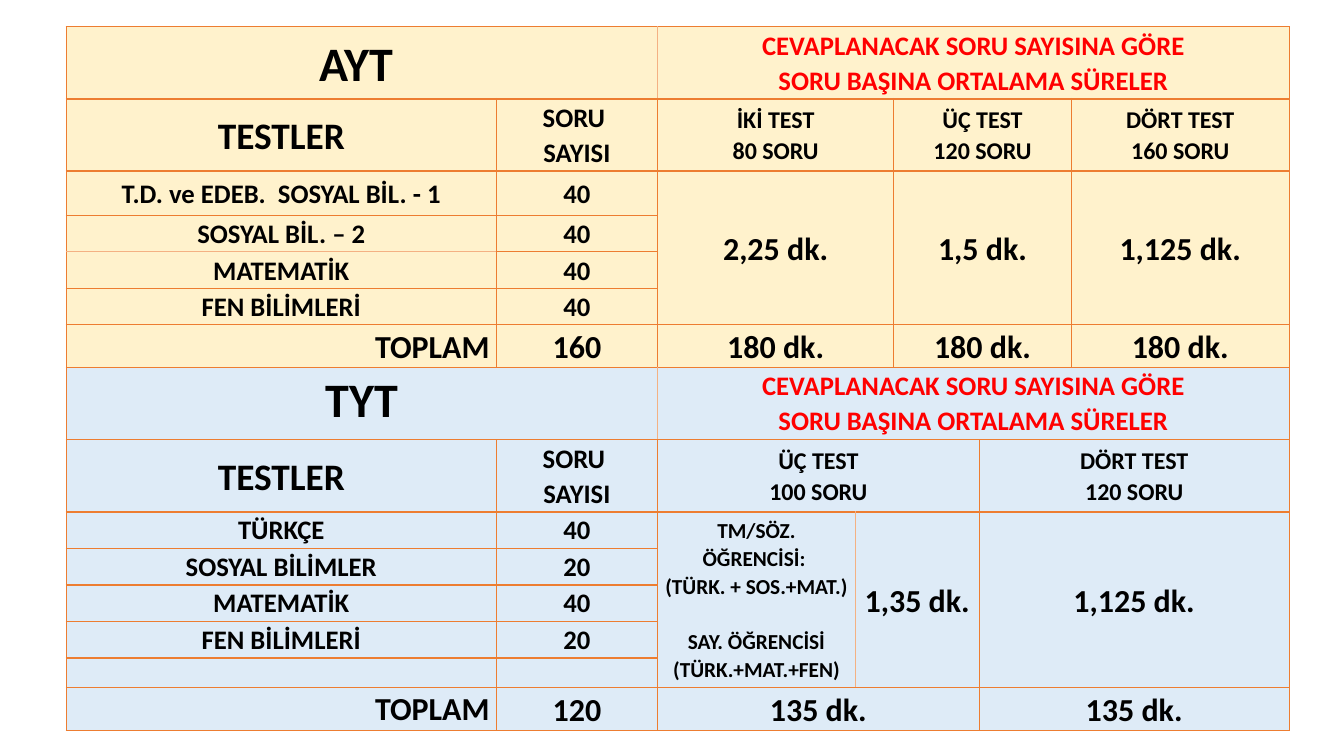
from dataclasses import dataclass, field

from lxml import etree
from pptx import Presentation
from pptx.dml.color import RGBColor
from pptx.enum import text
from pptx.oxml import ns
from pptx.table import Table, _Cell
from pptx.util import Inches, Pt

ORANGE = RGBColor(0xED, 0x7D, 0x31)
PALE_ORANGE = RGBColor(0xF4, 0xB1, 0x83)
CREAM = RGBColor(0xFF, 0xF2, 0xCC)
PALE_BLUE = RGBColor(0xDE, 0xEB, 0xF7)
RED = RGBColor(0xFF, 0x00, 0x00)
BLACK = RGBColor(0x00, 0x00, 0x00)

FONT = "Calibri"
CENTER, RIGHT = text.PP_ALIGN.CENTER, text.PP_ALIGN.RIGHT
TOP, MIDDLE = text.MSO_ANCHOR.TOP, text.MSO_ANCHOR.MIDDLE

COLUMN_WIDTHS = [4.48, 1.68, 2.06, 0.4, 0.89, 0.96, 2.27]
AYT_HEIGHTS = [0.75, 0.75, 0.46, 0.38, 0.38, 0.38, 0.45]
TYT_HEIGHTS = [0.75, 0.75, 0.38, 0.38, 0.38, 0.38, 0.31, 0.45]
ROW_HEIGHTS = AYT_HEIGHTS + TYT_HEIGHTS
TYT_ROW = len(AYT_HEIGHTS)


@dataclass(frozen=True)
class Border:
    color: RGBColor = ORANGE
    width: float = 1


SOFT = Border(PALE_ORANGE)
THICK = Border(width=2)


@dataclass
class Entry:
    """One table entry; edges holds the borders that differ, by side L, R, T, B."""
    row: int
    col: int
    lines: list[str]
    size: float
    rows: int = 1
    cols: int = 1
    color: RGBColor = BLACK
    align: text.PP_ALIGN = CENTER
    anchor: text.MSO_ANCHOR = MIDDLE
    edges: dict[str, Border] = field(default_factory=dict)
    gap_before: dict[int, float] = field(default_factory=dict)


def exam_head(top: int, exam: str, anchor: text.MSO_ANCHOR,
              bottom: Border) -> list[Entry]:
    """Exam name, red heading and the two column heads both exams share."""
    return [
        Entry(top, 0, [exam], 36, cols=2, anchor=anchor,
              edges={"R": SOFT, "B": bottom}),
        Entry(top, 2, ["CEVAPLANACAK SORU SAYISINA GÖRE",
                       "SORU BAŞINA ORTALAMA SÜRELER"], 20, cols=5,
              color=RED, anchor=anchor, edges={"L": SOFT, "B": bottom}),
        Entry(top + 1, 0, ["TESTLER"], 28, edges={"T": bottom}),
        Entry(top + 1, 1, ["SORU ", "SAYISI"], 20, edges={"T": bottom}),
    ]


def test_rows(top: int, tests: list[tuple[str, str]],
              anchor: text.MSO_ANCHOR) -> list[Entry]:
    return [Entry(top + i, col, [label], 20, anchor=anchor)
            for i, test in enumerate(tests) for col, label in enumerate(test)]


def total_row(row: int, questions: str, anchor: text.MSO_ANCHOR) -> list[Entry]:
    return [Entry(row, 0, ["TOPLAM"], 24, align=RIGHT, anchor=anchor),
            Entry(row, 1, [questions], 24)]


def ayt_entries() -> list[Entry]:
    tests = test_rows(2, [("T.D. ve EDEB.  SOSYAL BİL. - 1", "40"),
                          ("SOSYAL BİL. – 2", "40"),
                          ("MATEMATİK", "40"),
                          ("FEN BİLİMLERİ", "40")], MIDDLE)
    for test in tests:
        if test.col == 0 and test.row in (3, 4):
            test.edges["B" if test.row == 3 else "T"] = SOFT
    entries = exam_head(0, "AYT ", MIDDLE, THICK) + tests + total_row(6, "160", MIDDLE)
    for col, cols, count, questions, pace in [
            (2, 2, "İKİ TEST", "80 SORU", "2,25 dk."),
            (4, 2, "ÜÇ TEST", "120 SORU", "1,5 dk."),
            (6, 1, "DÖRT TEST", "160 SORU", "1,125 dk.")]:
        entries += [
            Entry(1, col, [count, questions], 18, cols=cols, edges={"T": THICK}),
            Entry(2, col, [pace], 24, rows=4, cols=cols),
            Entry(6, col, ["180 dk."], 24, cols=cols),
        ]
    return entries


def tyt_entries() -> list[Entry]:
    first_test, total = TYT_ROW + 2, len(ROW_HEIGHTS) - 1
    entries = exam_head(TYT_ROW, "TYT", TOP, Border())
    entries += test_rows(first_test, [("TÜRKÇE", "40"), ("SOSYAL BİLİMLER", "20"),
                                      ("MATEMATİK", "40"), ("FEN BİLİMLERİ", "20")], TOP)
    entries += total_row(total, "120", TOP)
    for col, cols, count, questions in [(2, 3, "ÜÇ TEST", "100 SORU"),
                                        (5, 2, "DÖRT TEST", "120 SORU")]:
        entries += [Entry(TYT_ROW + 1, col, [count, questions], 18, cols=cols),
                    Entry(total, col, ["135 dk."], 24, cols=cols)]
    return entries + [
        Entry(first_test, 2, ["TM/SÖZ. ÖĞRENCİSİ: ", "(TÜRK. + SOS.+MAT.)",
                              "SAY. ÖĞRENCİSİ", "(TÜRK.+MAT.+FEN)"], 16,
              rows=5, edges={"R": SOFT}, gap_before={2: 21}),
        Entry(first_test, 3, ["1,35 dk."], 24, rows=5, cols=2, edges={"L": SOFT}),
        Entry(first_test, 5, ["1,125 dk."], 24, rows=5, cols=2),
    ]


def style_cell(cell: _Cell, fill: RGBColor, edges: dict[str, Border]) -> None:
    cell.margin_left = cell.margin_right = Inches(0.07)
    cell.margin_top = cell.margin_bottom = 0
    properties = cell._tc.get_or_add_tcPr()
    for side in "LRTB":
        border = edges.get(side, Border())
        line = etree.SubElement(properties, ns.qn(f"a:ln{side}"), w=str(Pt(border.width)))
        solid = etree.SubElement(line, ns.qn("a:solidFill"))
        etree.SubElement(solid, ns.qn("a:srgbClr"), val=str(border.color))
    cell.fill.solid()
    cell.fill.fore_color.rgb = fill


def write_entry(table: Table, entry: Entry) -> None:
    cell = table.cell(entry.row, entry.col)
    if entry.rows * entry.cols > 1:
        cell.merge(table.cell(entry.row + entry.rows - 1, entry.col + entry.cols - 1))
    cell.vertical_anchor = entry.anchor
    frame = cell.text_frame
    for i, line in enumerate(entry.lines):
        paragraph = frame.add_paragraph() if i else frame.paragraphs[0]
        paragraph.alignment = entry.align
        paragraph.line_spacing = 1.07
        if i in entry.gap_before:
            paragraph.space_before = Pt(entry.gap_before[i])
        run = paragraph.add_run()
        run.text = line
        run.font.name = FONT
        run.font.size = Pt(entry.size)
        run.font.bold = True
        run.font.color.rgb = entry.color


def main() -> None:
    prs = Presentation()
    prs.slide_width, prs.slide_height = Inches(14), Inches(7.87)
    slide = prs.slides.add_slide(prs.slide_layouts[6])

    # Table grid
    table = slide.shapes.add_table(
        len(ROW_HEIGHTS), len(COLUMN_WIDTHS), Inches(0.69), Inches(0.28),
        Inches(sum(COLUMN_WIDTHS)), Inches(sum(ROW_HEIGHTS))).table
    table.first_row = table.horz_banding = False
    for column, width in zip(table.columns, COLUMN_WIDTHS):
        column.width = Inches(width)
    for row, height in zip(table.rows, ROW_HEIGHTS):
        row.height = Inches(height)

    # Fills and borders, AYT above TYT
    entries = ayt_entries() + tyt_entries()
    edges = {(row, col): entry.edges for entry in entries
             for row in range(entry.row, entry.row + entry.rows)
             for col in range(entry.col, entry.col + entry.cols)}
    for row in range(len(ROW_HEIGHTS)):
        for col in range(len(COLUMN_WIDTHS)):
            style_cell(table.cell(row, col), CREAM if row < TYT_ROW else PALE_BLUE,
                       edges.get((row, col), {}))

    # Wording
    for entry in entries:
        write_entry(table, entry)

    prs.save("out.pptx")


if __name__ == "__main__":
    main()
